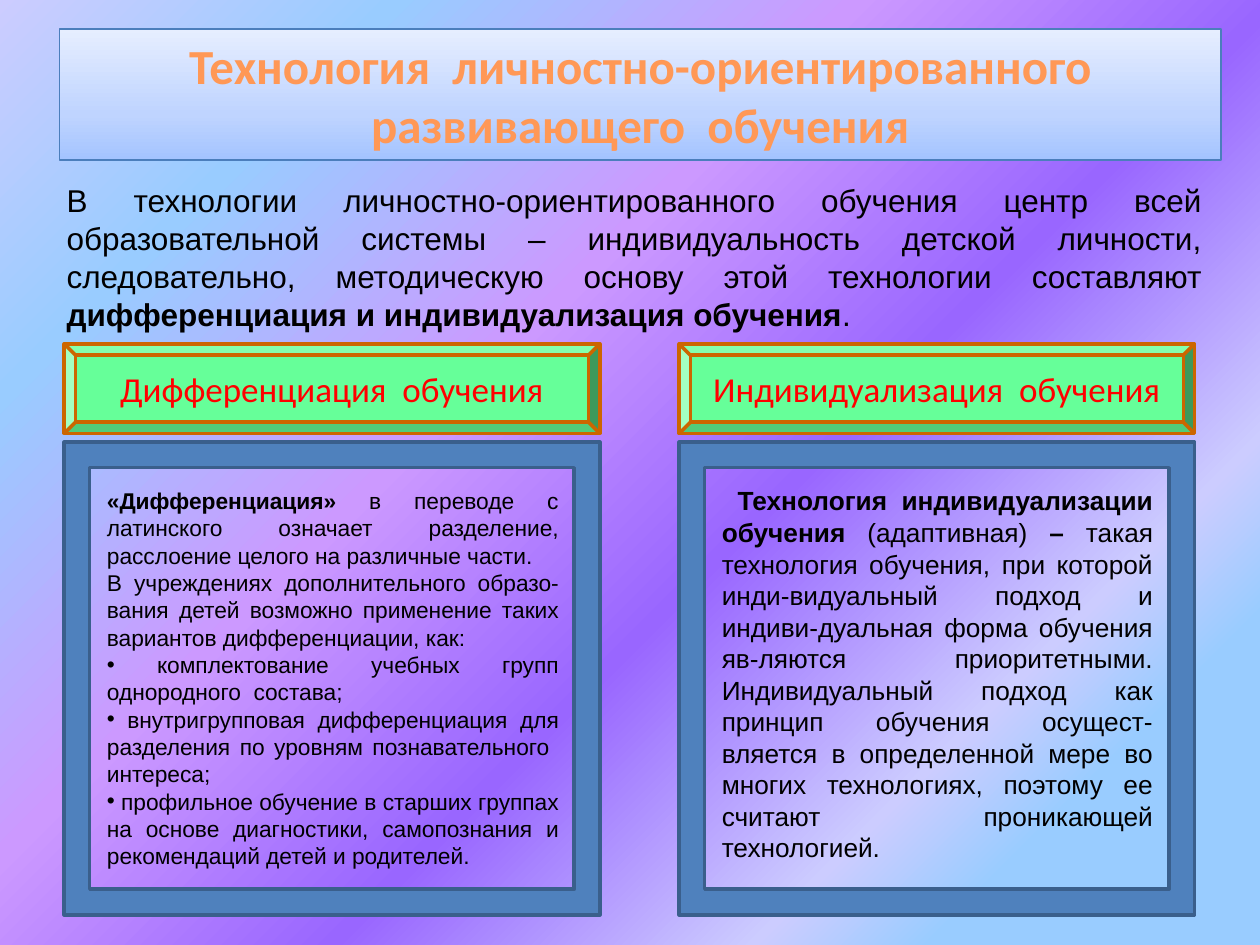
from lxml.etree import SubElement
from pptx import Presentation
from pptx.dml.color import RGBColor
from pptx.enum.shapes import MSO_SHAPE as Shape
from pptx.enum.text import MSO_ANCHOR as Anchor, PP_ALIGN as Align
from pptx.oxml.ns import qn
from pptx.util import Inches, Pt

COLORS = {
    "title": "FF9856", "title_line": "4B7EBC", "text": "000000",
    "heading": "FF0000", "bevel": "66FF99", "bevel_line": "CC6600",
    "frame": "4F81BD", "frame_line": "3A5F8C",
}
# Gradient stops: position, colour, opacity (all in percent)
BACKGROUND_STOPS = [
    (15, "99CCFF", 100), (23, "CCCCFF", 67), (42, "9966FF", 64),
    (61, "CC99FF", 88), (82, "99CCFF", 71), (100, "CCCCFF", 100),
]
TITLE_STOPS = [(0, "A4C4FF", 100), (35, "BFD4FF", 100), (100, "E6EEFF", 100)]

TITLE = ["Технология  личностно-ориентированного", "развивающего  обучения"]
# Paragraphs are lists of (text, bold) runs
INTRO = [[
    ("В технологии личностно-ориентированного обучения центр всей "
     "образовательной системы – индивидуальность детской личности, "
     "следовательно, методическую основу этой технологии составляют ", False),
    ("дифференциация и индивидуализация обучения", True),
    (".", False),
]]
DIFFERENTIATION = [
    [("«Дифференциация»", True),
     (" в переводе с латинского означает разделение, расслоение целого "
      "на различные части.", False)],
    [("В учреждениях дополнительного образо-вания детей возможно применение "
      "таких вариантов дифференциации, как: ", False)],
]
VARIANTS = [
    [(" комплектование учебных групп однородного  состава;", False)],
    [(" внутригрупповая дифференциация для разделения по уровням "
      "познавательного  интереса;", False)],
    [(" профильное обучение в старших группах на основе диагностики, "
      "самопознания и рекомендаций детей и родителей.", False)],
]
INDIVIDUALIZATION = [[
    (" ", True),
    ("Технология индивидуализации обучения ", True),
    ("(адаптивная) ", False),
    ("– ", True),
    ("такая технология обучения, при которой инди-видуальный подход и "
     "индиви-дуальная форма обучения яв-ляются приоритетными. Индивидуальный "
     "подход как принцип обучения осущест-вляется в определенной мере во "
     "многих технологиях, поэтому ее считают проникающей технологией.", False),
]]


def color(name):
    return RGBColor.from_string(COLORS[name])


def set_font(font, name, size, color_name, bold=None):
    font.name, font.size, font.bold = name, Pt(size), bold
    font.color.rgb = color(color_name)


def set_gradient(fill, owner, stops, angle=None):
    """Linear at the given angle, or circular from the bottom right corner."""
    fill.gradient()
    gradient = next(owner.iter(qn("a:gradFill")))
    for child in list(gradient):
        gradient.remove(child)
    stop_list = SubElement(gradient, qn("a:gsLst"))
    for position, value, opacity in stops:
        stop = SubElement(stop_list, qn("a:gs"), pos=str(position * 1000))
        stop_color = SubElement(stop, qn("a:srgbClr"), val=value)
        if opacity < 100:
            SubElement(stop_color, qn("a:alpha"), val=str(opacity * 1000))
    if angle is None:
        circle = SubElement(gradient, qn("a:path"))
        circle.set("path", "circle")
        SubElement(circle, qn("a:fillToRect"), l="100000", t="100000")
    else:
        SubElement(gradient, qn("a:lin"), ang=str(angle * 60000), scaled="0")


def add_title(slide):
    title = slide.shapes.title
    title.left, title.top = Inches(0.47), Inches(0.23)
    title.width, title.height = Inches(9.22), Inches(1.04)
    set_gradient(title.fill, title._element, TITLE_STOPS, angle=270)
    title.line.color.rgb = color("title_line")
    title.line.width = Pt(0.75)
    frame = title.text_frame
    frame.text = "\n".join(TITLE)
    frame.vertical_anchor = Anchor.TOP
    for paragraph in frame.paragraphs:
        paragraph.alignment = Align.CENTER
        set_font(paragraph.font, "Calibri", 28, "title", True)


def add_panel(slide, kind, left, top, width, height, style):
    shape = slide.shapes.add_shape(
        kind, Inches(left), Inches(top), Inches(width), Inches(height))
    shape.shadow.inherit = False
    shape.fill.solid()
    shape.fill.fore_color.rgb = color(style)
    shape.line.color.rgb = color(style + "_line")
    shape.line.width = Pt(2)
    return shape


def add_column(slide, left, width, heading):
    bevel = add_panel(slide, Shape.BEVEL, left, 2.73, width, 0.71, "bevel")
    bevel.text_frame.vertical_anchor = Anchor.MIDDLE
    paragraph = bevel.text_frame.paragraphs[0]
    paragraph.text = heading
    paragraph.alignment = Align.CENTER
    set_font(paragraph.font, "Calibri", 20, "heading")
    border = add_panel(slide, Shape.FRAME, left, 3.51, width, 3.75, "frame")
    border.adjustments[0] = 0.054


def add_text(slide, left, top, width, height, size, paragraphs,
             bullets=(), anchor=Anchor.TOP):
    box = slide.shapes.add_textbox(
        Inches(left), Inches(top), Inches(width), Inches(height))
    frame = box.text_frame
    frame.word_wrap = True
    frame.vertical_anchor = anchor
    for index, runs in enumerate([*paragraphs, *bullets]):
        paragraph = frame.add_paragraph() if index else frame.paragraphs[0]
        paragraph.alignment = Align.JUSTIFY
        if index >= len(paragraphs):
            properties = paragraph._p.get_or_add_pPr()
            SubElement(properties, qn("a:buFont"), typeface="Arial")
            SubElement(properties, qn("a:buChar"), char="•")
        set_font(paragraph.font, "Arial", size, "text")
        for text, bold in runs:
            run = paragraph.add_run()
            run.text = text
            run.font.bold = bold
    return frame


def main():
    presentation = Presentation()
    presentation.slide_width, presentation.slide_height = Inches(10), Inches(7.5)
    slide = presentation.slides.add_slide(presentation.slide_layouts[5])
    set_gradient(slide.background.fill, slide._element, BACKGROUND_STOPS)

    # Title and introduction
    add_title(slide)
    add_text(slide, 0.43, 1.39, 9.21, 1.31, 18, INTRO)

    # Two columns: heading and frame
    add_column(slide, 0.51, 4.25, "Дифференциация  обучения")
    add_column(slide, 5.39, 4.09, "Индивидуализация  обучения")

    # Column texts
    add_text(slide, 0.75, 3.69, 3.78, 3.38, 13, DIFFERENTIATION, VARIANTS,
             Anchor.MIDDLE)
    individual = add_text(slide, 5.63, 3.75, 3.62, 3.18, 15, INDIVIDUALIZATION)
    individual.paragraphs[0].runs[0].font.size = Pt(18)

    presentation.save("out.pptx")


if __name__ == "__main__":
    main()
